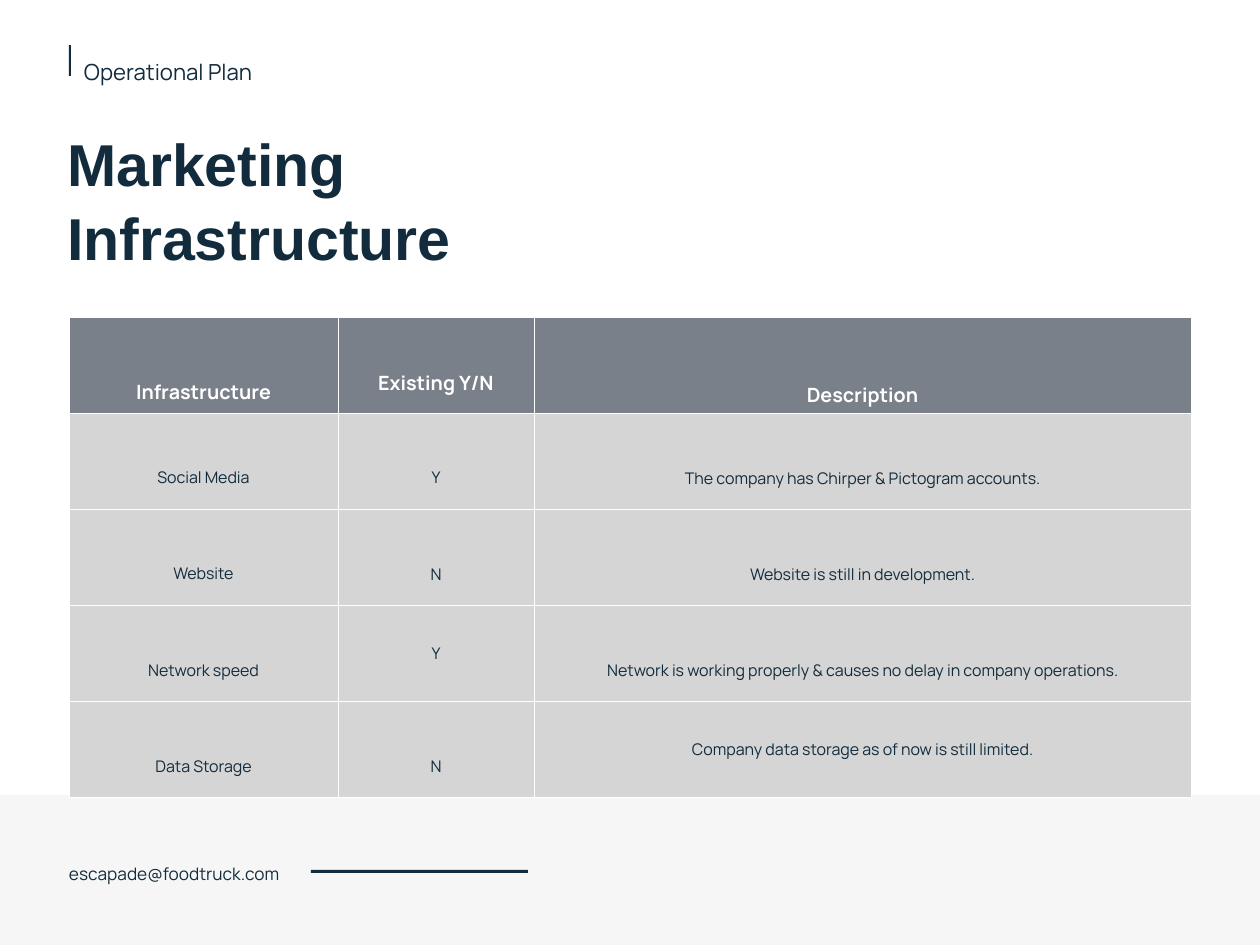
from pptx import Presentation
from pptx.dml.color import RGBColor
from pptx.enum.shapes import MSO_SHAPE
from pptx.enum.text import MSO_ANCHOR, MSO_AUTO_SIZE, PP_ALIGN
from pptx.oxml.ns import qn
from pptx.util import Pt
from lxml import etree

RECTANGLE = MSO_SHAPE.RECTANGLE
TOP, MIDDLE, BOTTOM = MSO_ANCHOR.TOP, MSO_ANCHOR.MIDDLE, MSO_ANCHOR.BOTTOM
NO_AUTOFIT = MSO_AUTO_SIZE.NONE
LEFT, CENTER = PP_ALIGN.LEFT, PP_ALIGN.CENTER

PX = 10320  # EMU per px
THEME = {
    "navy": "122C3D", "white": "FFFFFF", "header": "798089",
    "cell": "D5D5D5", "band": "5E5E5E",
    "heading_font": "Arial", "text_font": "Manrope",
    "heading": 48, "section": 18, "column": 16, "contact": 14, "entry": 13,
}


def write(frame, text, size, spacing, anchor=TOP, font="text_font",
          color="navy", bold=False, align=LEFT, inset=3):
    frame.text = text
    frame.word_wrap = True
    frame.auto_size = NO_AUTOFIT
    frame.vertical_anchor = anchor
    frame.margin_left = frame.margin_right = inset * PX
    frame.margin_top = frame.margin_bottom = inset * PX
    paragraph = frame.paragraphs[0]
    paragraph.alignment = align
    paragraph.line_spacing = spacing
    paragraph.font.name = THEME[font]
    paragraph.font.size = Pt(THEME[size])
    paragraph.font.bold = bold
    paragraph.font.color.rgb = RGBColor.from_string(THEME[color])


def add_block(x, y, width, height, color):
    block = slide.shapes.add_shape(RECTANGLE, x * PX, y * PX, width * PX, height * PX)
    block.shadow.inherit = False
    block.line.fill.background()
    block.fill.solid()
    block.fill.fore_color.rgb = RGBColor.from_string(THEME[color])
    return block


prs = Presentation()
prs.slide_width, prs.slide_height = 1260 * PX, 945 * PX
slide = prs.slides.add_slide(prs.slide_layouts[5])

# Heading
heading = slide.shapes.title
heading.left, heading.top = 64 * PX, 125 * PX
heading.width, heading.height = 623 * PX, 146 * PX
write(heading.text_frame, "Marketing Infrastructure", "heading", 1.05,
      anchor=MIDDLE, font="heading_font", bold=True)

# Section label with its marker
add_block(69, 45, 2, 31, "navy")
section = slide.shapes.add_textbox(81 * PX, 42 * PX, 224 * PX, 38 * PX)
write(section.text_frame, "Operational Plan", "section", 1.5)

# Translucent footer band
footer = add_block(0, 795, 1260, 150, "band")
band_color = footer.fill._xPr.find(qn("a:solidFill"))[0]
etree.SubElement(band_color, qn("a:alpha"), val="5000")

# Infrastructure table: text and line spacing of each cell
COLUMN_WIDTHS = [269, 196, 657]
ROW_HEIGHT = 96
HEADINGS = [("Infrastructure", 1, BOTTOM, 8), ("Existing Y/N", 2.31, MIDDLE, 5),
            ("Description", 1, BOTTOM, 5)]
ENTRIES = [
    [("Social Media", 2.54), ("Y", 2.54),
     ("The company has Chirper & Pictogram accounts.", 2.62)],
    [("Website", 2.54), ("N", 2.62), ("Website is still in development.", 2.62)],
    [("Network speed", 2.62), ("Y", 1),
     ("Network is working properly & causes no delay in company operations.", 2.62)],
    [("Data Storage", 2.62), ("N", 2.62),
     ("Company data storage as of now is still limited.", 1)],
]
row_count = len(ENTRIES) + 1
table = slide.shapes.add_table(
    row_count, len(COLUMN_WIDTHS), 69 * PX, 317 * PX,
    sum(COLUMN_WIDTHS) * PX, row_count * ROW_HEIGHT * PX).table
table.horz_banding = False
for column, width in zip(table.columns, COLUMN_WIDTHS):
    column.width = width * PX
for row in table.rows:
    row.height = ROW_HEIGHT * PX

for column, (text, spacing, anchor, bottom) in enumerate(HEADINGS):
    cell = table.cell(0, column)
    write(cell.text_frame, text, "column", spacing, color="white", bold=True, align=CENTER)
    cell.vertical_anchor = anchor
    cell.margin_bottom = bottom * PX
for row, entries in enumerate(ENTRIES, start=1):
    for column, (text, spacing) in enumerate(entries):
        cell = table.cell(row, column)
        write(cell.text_frame, text, "entry", spacing, align=CENTER)
        cell.vertical_anchor = MIDDLE
        cell.margin_bottom = 5 * PX

# Cell fills, side margins and white borders
for row in range(row_count):
    for column in range(len(COLUMN_WIDTHS)):
        cell = table.cell(row, column)
        cell.margin_left = cell.margin_right = cell.margin_top = 5 * PX
        properties = cell._tc.get_or_add_tcPr()
        for side in ("a:lnL", "a:lnR", "a:lnT", "a:lnB"):
            border = etree.SubElement(properties, qn(side), w=str(Pt(0.75)))
            border_fill = etree.SubElement(border, qn("a:solidFill"))
            etree.SubElement(border_fill, qn("a:srgbClr"), val=THEME["white"])
        cell.fill.solid()
        cell.fill.fore_color.rgb = RGBColor.from_string(
            THEME["cell" if row else "header"])

# Contact line
contact = slide.shapes.add_textbox(66 * PX, 856 * PX, 314 * PX, 38 * PX)
write(contact.text_frame, "escapade@foodtruck.com", "contact", 1.2)
add_block(311, 870, 217, 3, "navy")

prs.save("out.pptx")
